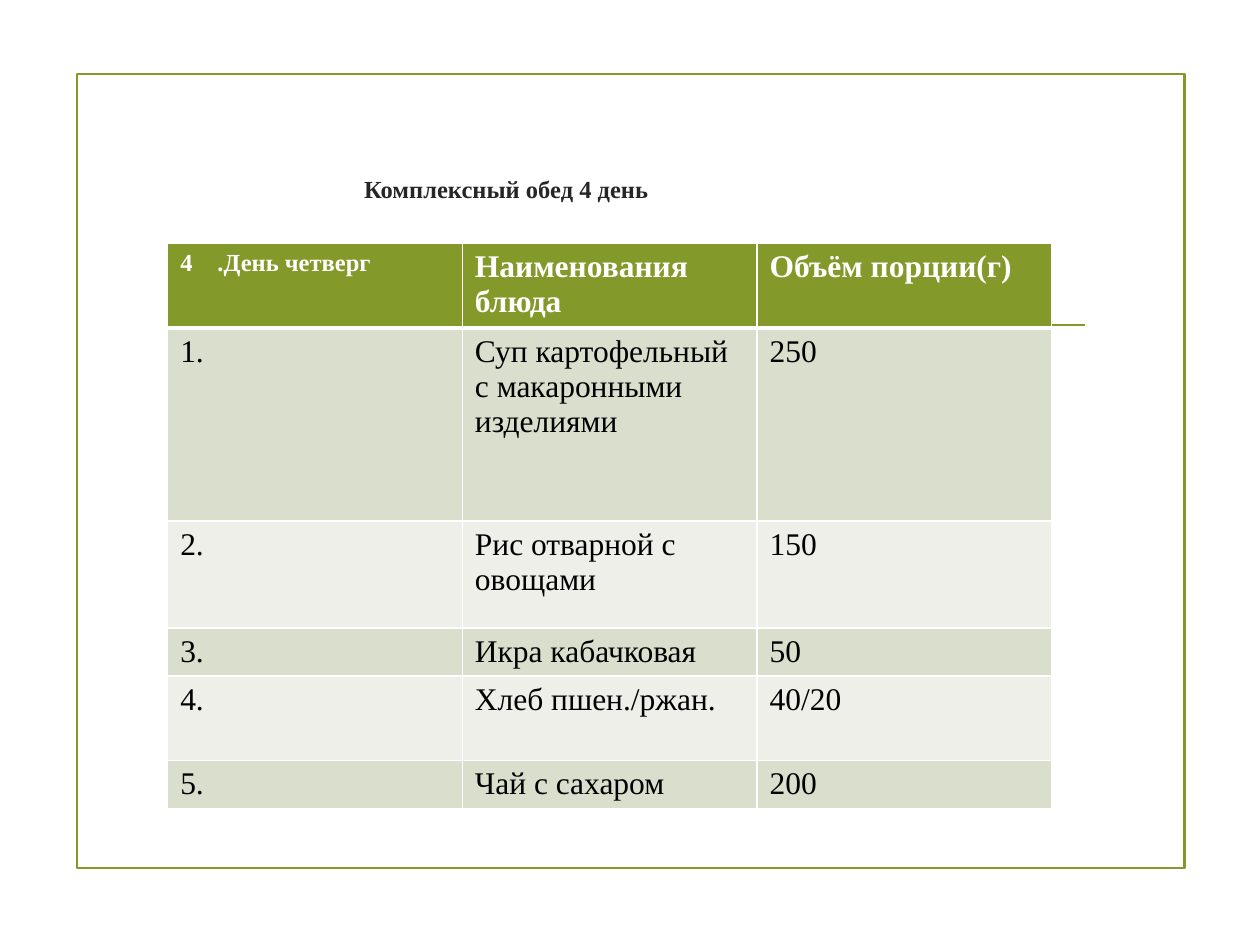
"""Build the Thursday set-lunch menu slide."""
from lxml import etree
from pptx import Presentation
from pptx.dml.color import RGBColor
from pptx.enum.shapes import MSO_CONNECTOR, MSO_SHAPE
from pptx.enum.text import MSO_ANCHOR, PP_ALIGN
from pptx.oxml.ns import qn
from pptx.util import Cm, Pt

RECTANGLE = MSO_SHAPE.RECTANGLE
STRAIGHT = MSO_CONNECTOR.STRAIGHT
MIDDLE = MSO_ANCHOR.MIDDLE
LEFT = PP_ALIGN.LEFT

HEADING = "Комплексный обед 4 день"
MENU = [
    ("4\t.День четверг", "Наименования блюда", "Объём порции(г)"),
    ("1.", "Суп картофельный с макаронными изделиями", "250"),
    ("2.", "Рис отварной с овощами", "150"),
    ("3.", "Икра кабачковая", "50"),
    ("4.", "Хлеб пшен./ржан.", "40/20"),
    ("5.", "Чай с сахаром", "200"),
]
ROW_HEIGHTS = [1.7, 3.89, 2.16, 0.97, 1.7, 0.97]
COLUMN_WIDTH = 5.94
DAY_TAB = 0.75

THEME = {
    "font": "Times New Roman",
    "accent": "83992A",
    "heading": "262626",
    "header_text": "FFFFFF",
    "body_text": "000000",
    "border": "FFFFFF",
    "bands": ("EDEFE8", "D9DECD"),
    "small": 14,
    "large": 18,
    "rule": 1.25,
    "thin": 1,
    "thick": 3,
}


def colour(value):
    return RGBColor.from_string(value)


def style_font(font, size, ink, bold):
    values = {"name": THEME["font"], "size": Pt(size), "bold": bold}
    for key, value in values.items():
        setattr(font, key, value)
    font.color.rgb = colour(ink)


def style_line(line):
    line.color.rgb = colour(THEME["accent"])
    line.width = Pt(THEME["rule"])


def add_border(cell, side, width):
    properties = cell._tc.get_or_add_tcPr()
    border = etree.SubElement(properties, qn(f"a:ln{side}"), w=str(Pt(width)))
    fill = etree.SubElement(border, qn("a:solidFill"))
    etree.SubElement(fill, qn("a:srgbClr"), val=THEME["border"])


def add_frame(slide):
    frame = slide.shapes.add_shape(RECTANGLE, Cm(1.55), Cm(1.5), Cm(22.33), Cm(16))
    frame.shadow.inherit = False
    frame.fill.background()
    style_line(frame.line)
    rule = slide.shapes.add_connector(STRAIGHT, Cm(3.56), Cm(6.55), Cm(21.87), Cm(6.55))
    style_line(rule.line)
    etree.SubElement(rule._element.spPr, qn("a:effectLst"))


def add_heading(slide):
    heading = slide.shapes.title
    box = {"left": 3.28, "top": 2.79, "width": 18.9, "height": 2.03}
    for key, value in box.items():
        setattr(heading, key, Cm(value))
    frame = heading.text_frame
    frame.text = HEADING
    frame.vertical_anchor = MIDDLE
    frame.margin_left = Cm(4.06)
    paragraph = frame.paragraphs[0]
    paragraph.alignment = LEFT
    style_font(paragraph.font, THEME["small"], THEME["heading"], True)


def fill_cell(cell, text, row, column):
    is_header = row == 0
    widths = {
        "L": THEME["thin"],
        "R": THEME["thin"],
        "T": THEME["thick"] if row == 1 else THEME["thin"],
        "B": THEME["thick"] if is_header else THEME["thin"],
    }
    for side, width in widths.items():
        add_border(cell, side, width)
    cell.fill.solid()
    cell.fill.fore_color.rgb = colour(THEME["accent"] if is_header else THEME["bands"][row % 2])
    cell.text = text
    paragraph = cell.text_frame.paragraphs[0]
    if "\t" in text:
        tabs = etree.SubElement(paragraph._p.get_or_add_pPr(), qn("a:tabLst"))
        etree.SubElement(tabs, qn("a:tab"), pos=str(Cm(DAY_TAB)), algn="l")
    size = THEME["small"] if is_header and column == 0 else THEME["large"]
    ink = THEME["header_text"] if is_header else THEME["body_text"]
    style_font(paragraph.runs[0].font, size, ink, is_header)


def add_menu(slide):
    columns = len(MENU[0])
    menu = slide.shapes.add_table(
        len(MENU), columns, Cm(3.38), Cm(4.91),
        Cm(COLUMN_WIDTH * columns), Cm(sum(ROW_HEIGHTS)),
    ).table
    for column in menu.columns:
        column.width = Cm(COLUMN_WIDTH)
    for row, (dish, height) in enumerate(zip(MENU, ROW_HEIGHTS)):
        menu.rows[row].height = Cm(height)
        for column, text in enumerate(dish):
            fill_cell(menu.cell(row, column), text, row, column)


def main():
    deck = Presentation()
    deck.slide_width, deck.slide_height = Cm(25.4), Cm(19.05)
    slide = deck.slides.add_slide(deck.slide_layouts[5])
    add_frame(slide)
    add_heading(slide)
    add_menu(slide)
    deck.save("out.pptx")


if __name__ == "__main__":
    main()
